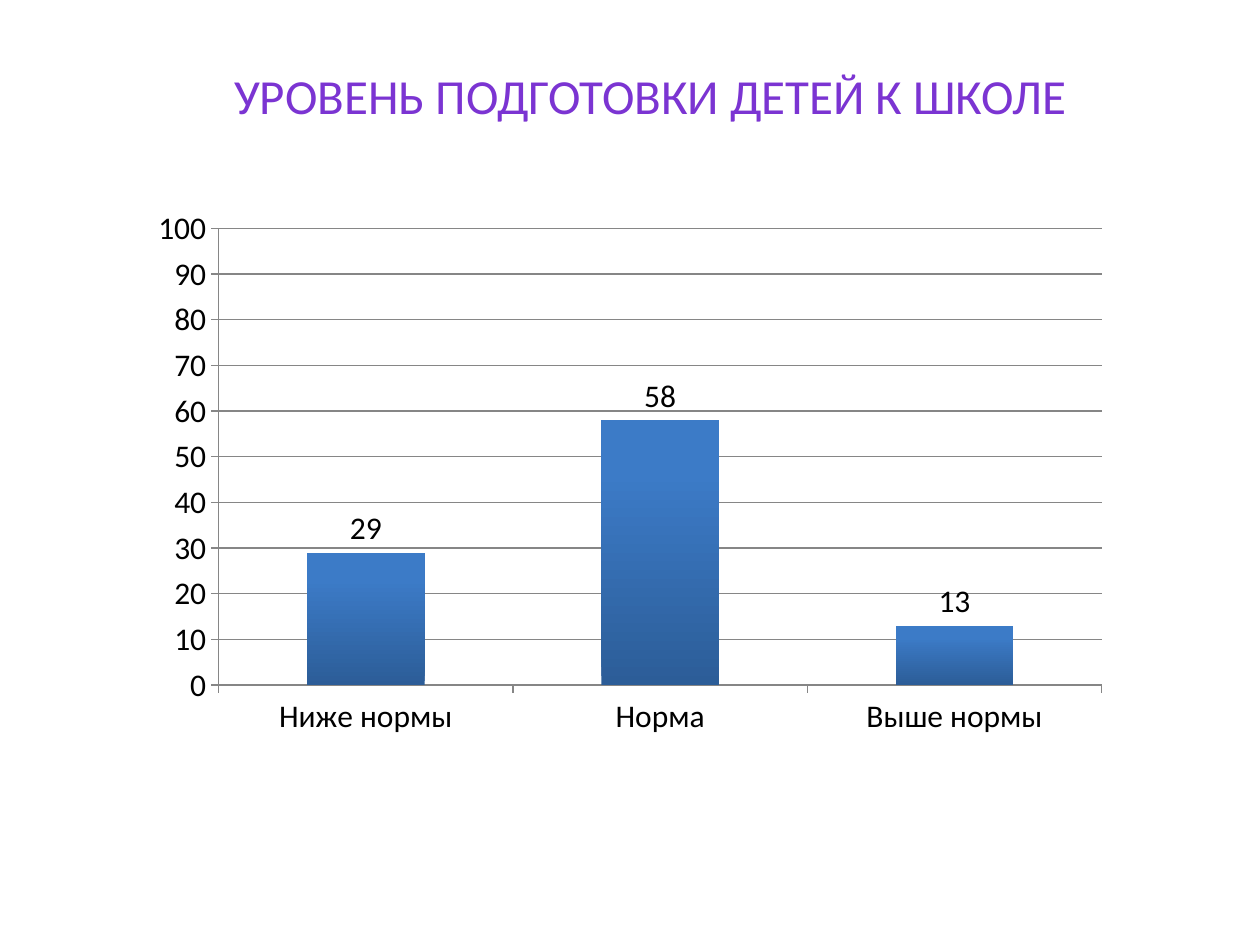
import pptx
import pptx.chart.data
import pptx.dml.color
import pptx.enum.chart
import pptx.enum.text
import pptx.util

W, H = 10, 7.5  # slide size in inches
FONT = "Calibri"
COLORS = {
    "title": "7B34D2",
    "text": "000000",
    "axis": "868686",
    "bar_bottom": "2C5D98",
    "bar_top": "3C7BC7",
}
LEVELS = {"Ниже нормы": 29, "Норма": 58, "Выше нормы": 13}


def rgb(name):
    return pptx.dml.color.RGBColor.from_string(COLORS[name])


def box(x, y, w, h):
    """Turn shares of the slide's size into left, top, width, height."""
    return [pptx.util.Inches(v) for v in (x * W, y * H, w * W, h * H)]


def style_font(font, size, color):
    font.name = FONT
    font.size = pptx.util.Pt(size)
    font.color.rgb = rgb(color)


def add_title(s, text, place):
    tf = s.shapes.add_textbox(*place).text_frame
    tf.word_wrap = True
    tf.vertical_anchor = pptx.enum.text.MSO_ANCHOR.MIDDLE
    p = tf.paragraphs[0]
    p.text = text
    p.alignment = pptx.enum.text.PP_ALIGN.CENTER
    style_font(p.font, 28, "title")


def style_line(line):
    line.color.rgb = rgb("axis")
    line.width = pptx.util.Pt(0.75)


def fill_bars(series):
    fill = series.format.fill
    fill.gradient()
    fill.gradient_angle = 90
    stops = zip(fill.gradient_stops, ("bar_bottom", "bar_top"), (0, 0.8))
    for stop, color, position in stops:
        stop.color.rgb = rgb(color)
        stop.position = position


def add_level_chart(s, levels, place):
    data = pptx.chart.data.CategoryChartData()
    data.categories = list(levels)
    data.add_series("Series 1", list(levels.values()))
    kind = pptx.enum.chart.XL_CHART_TYPE.COLUMN_CLUSTERED
    chart = s.shapes.add_chart(kind, *place, data).chart
    chart.has_title = False
    chart.has_legend = False
    style_font(chart.font, 18, "text")

    # Axes and gridlines
    for axis in (chart.category_axis, chart.value_axis):
        axis.major_tick_mark = pptx.enum.chart.XL_TICK_MARK.OUTSIDE
        style_line(axis.format.line)
    axis = chart.value_axis
    axis.minimum_scale, axis.maximum_scale, axis.major_unit = 0, 100, 10
    axis.has_major_gridlines = True
    style_line(axis.major_gridlines.format.line)

    # Bars with their values
    plot = chart.plots[0]
    plot.gap_width = 150
    plot.vary_by_categories = False
    plot.has_data_labels = True
    labels = plot.data_labels
    labels.show_value = True
    labels.position = pptx.enum.chart.XL_LABEL_POSITION.OUTSIDE_END
    style_font(labels.font, 18, "text")
    fill_bars(plot.series[0])


def main():
    prs = pptx.Presentation()
    prs.slide_width = pptx.util.Inches(W)
    prs.slide_height = pptx.util.Inches(H)
    s = prs.slides.add_slide(prs.slide_layouts[6])
    add_title(s, "УРОВЕНЬ ПОДГОТОВКИ ДЕТЕЙ К ШКОЛЕ", box(0.083, 0.048, 0.866, 0.105))
    add_level_chart(s, LEVELS, box(0.11, 0.21, 0.78, 0.58))
    prs.save("out.pptx")


if __name__ == "__main__":
    main()
